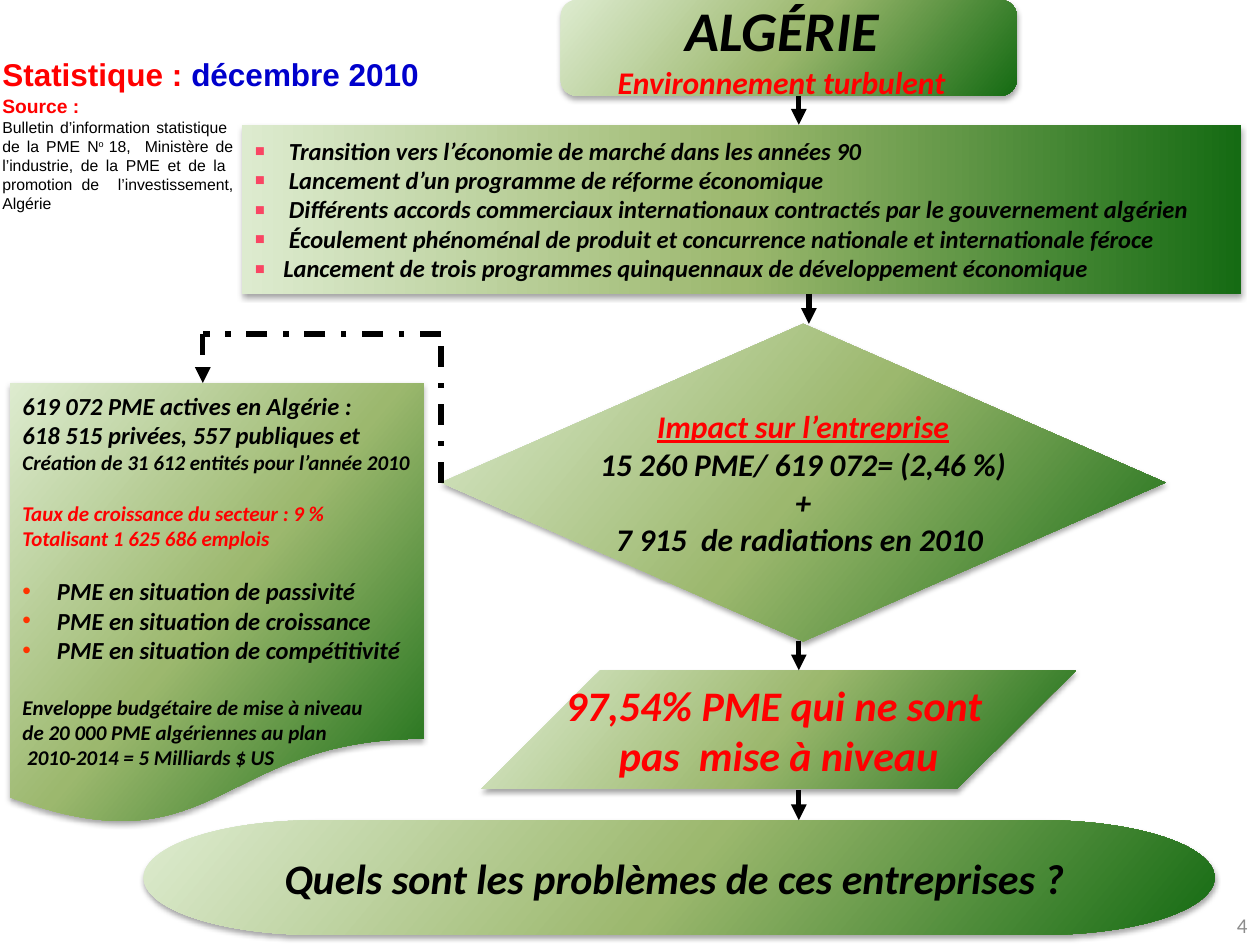
from lxml import etree
from pptx import Presentation, util as u
from pptx.dml.color import RGBColor
from pptx.enum import dml, shapes, text
from pptx.oxml import parse_xml
from pptx.oxml.ns import nsdecls, qn

PX = 9144
BLACK, RED, BLUE, GREY = "000000", "FF0000", "0000CC", "8C8C8C"
STOPS = ((0, "DDEBCF"), (50, "9CB86E"), (100, "156B13"))
KIND = shapes.MSO_SHAPE
LEFT, CENTER, RIGHT, JUSTIFY = (
    text.PP_ALIGN.LEFT, text.PP_ALIGN.CENTER, text.PP_ALIGN.RIGHT, text.PP_ALIGN.JUSTIFY)


def px(*values):
    """Turn px (100 to the inch) into EMU."""
    return [u.Emu(v * PX) for v in values]


def rgb(value):
    """Turn a hex string into a colour."""
    return RGBColor.from_string(value)


def add_run(p, content, size, color, font="Calibri", bold=True, italic=True, underline=False, raised=False):
    """Add one styled run to a paragraph."""
    r = p.add_run()
    r.text = content
    f = r.font
    f.size, f.name, f.bold, f.italic, f.underline = u.Pt(size), font, bold, italic, underline
    f.color.rgb = rgb(color)
    if raised:
        f._element.set("baseline", "30000")


def add_paragraph(tf, runs, align=LEFT, before=0, **style):
    """Fill the first empty paragraph, or a new one, with (text, size, colour) runs."""
    p = tf.paragraphs[0] if not tf.paragraphs[0].runs else tf.add_paragraph()
    p.alignment, p.space_before = align, u.Pt(before)
    for run in runs:
        add_run(p, *run, **style)
    return p


def add_bullet(p, char, color, percent, indent=23):
    """Give a paragraph a hanging coloured bullet."""
    pPr = p._p.get_or_add_pPr()
    pPr.set("marL", str(indent * PX))
    pPr.set("indent", str(-indent * PX))
    clr = etree.SubElement(pPr, qn("a:buClr"))
    etree.SubElement(clr, qn("a:srgbClr"), val=color)
    etree.SubElement(pPr, qn("a:buSzPct"), val=str(percent * 1000))
    etree.SubElement(pPr, qn("a:buFont"), typeface="Arial")
    etree.SubElement(pPr, qn("a:buChar"), char=char)


def add_panel(s, kind, box, angle=40, wrap=False):
    """Add a green gradient shape with a soft shadow."""
    sp = s.shapes.add_shape(kind, *px(*box))
    sp.line.fill.background()
    stops = "".join(f'<a:gs pos="{pos * 1000}"><a:srgbClr val="{c}"/></a:gs>' for pos, c in STOPS)
    grad = parse_xml(f'<a:gradFill {nsdecls("a")} rotWithShape="1"><a:gsLst>{stops}</a:gsLst>'
                     f'<a:lin ang="{angle * 60000}" scaled="0"/></a:gradFill>')
    shadow = parse_xml(f'<a:effectLst {nsdecls("a")}><a:outerShdw blurRad="40000" dist="23000" dir="5400000" '
                       'rotWithShape="0"><a:srgbClr val="000000"><a:alpha val="35000"/></a:srgbClr>'
                       '</a:outerShdw></a:effectLst>')
    spPr = sp._element.spPr
    spPr.find(qn("a:prstGeom")).addnext(grad)
    spPr.append(shadow)
    tf = sp.text_frame
    tf.word_wrap, tf.vertical_anchor = wrap, text.MSO_ANCHOR.MIDDLE
    return sp


def add_centered(s, kind, box, lines):
    """Add a panel holding centred one-run lines."""
    sp = add_panel(s, kind, box)
    for content, size, color, underline in lines:
        add_paragraph(sp.text_frame, [(content, size, color)], CENTER, underline=underline)
    return sp


def add_context(s, box):
    """Add the bulleted panel on the economic context."""
    tf = add_panel(s, KIND.FLOWCHART_PROCESS, box, angle=0, wrap=True).text_frame
    for content in (
            " Transition vers l’économie de marché dans les années 90",
            " Lancement d’un programme de réforme économique",
            " Différents accords commerciaux internationaux contractés par le gouvernement algérien",
            " Écoulement phénoménal de produit et concurrence nationale et internationale féroce",
            "Lancement de trois programmes quinquennaux de développement économique"):
        add_bullet(add_paragraph(tf, [(content, 14, BLACK)]), "▪", "F94563", 130)


def add_figures(s, box):
    """Add the document panel with the key figures on firms."""
    tf = add_panel(s, KIND.FLOWCHART_DOCUMENT, box, wrap=True).text_frame
    tf.vertical_anchor = text.MSO_ANCHOR.TOP
    tf.margin_top, tf.margin_right = px(6, 0)
    for content, size, color, before, bullet in (
            ("619 072 PME actives en Algérie :", 14, BLACK, 0, False),
            ("618 515 privées, 557 publiques et", 14, BLACK, 0, False),
            ("Création de 31 612 entités pour l’année 2010", 12, BLACK, 0, False),
            ("Taux de croissance du secteur : 9 %", 12, RED, 14.6, False),
            ("Totalisant 1 625 686 emplois", 12, RED, 0, False),
            (" PME en situation de passivité", 14, BLACK, 14.6, True),
            (" PME en situation de croissance", 14, BLACK, 0, True),
            (" PME en situation de compétitivité", 14, BLACK, 0, True),
            ("Enveloppe budgétaire de mise à niveau", 12, BLACK, 17, False),
            ("de 20 000 PME algériennes au plan", 12, BLACK, 0, False),
            (" 2010-2014 = 5 Milliards $ US", 12, BLACK, 0, False)):
        p = add_paragraph(tf, [(content, size, color)], before=before)
        if bullet:
            add_bullet(p, "•", "FF3300", 100)


def add_line(s, ends, dashed=False, arrow=True):
    """Add a thick black straight connector."""
    c = s.shapes.add_connector(shapes.MSO_CONNECTOR.STRAIGHT, *px(*ends))
    c.line.width = u.Pt(3)
    c.line.color.rgb = rgb(BLACK)
    if dashed:
        c.line.dash_style = dml.MSO_LINE.DASH_DOT
    if arrow:
        etree.SubElement(c.line._get_or_add_ln(), qn("a:tailEnd"), type="triangle")
    etree.SubElement(c._element.spPr, qn("a:effectLst"))
    return c


def add_text(s, box):
    """Add an empty wrapping text box and return its frame."""
    tf = s.shapes.add_textbox(*px(*box)).text_frame
    tf.word_wrap = True
    return tf


def add_source(s, left, top):
    """Add the statistics heading and its source note."""
    style = dict(font="Arial", italic=False)
    heading = add_text(s, (left, top, 366, 40))
    add_paragraph(heading, [("Statistique : ", 18, RED), ("décembre 2010", 18, BLUE)], **style)
    note = add_text(s, (left, top + 31, 203, 104))
    add_paragraph(note, [("Source :", 11, RED)], **style)
    p = add_paragraph(note, [("Bulletin d’information statistique  de la PME N", 9, BLACK)],
                      JUSTIFY, bold=False, **style)
    add_run(p, "o ", 9, BLACK, bold=False, raised=True, **style)
    add_run(p, "18,  Ministère de l’industrie, de la PME et de la  promotion de  "
               "l’investissement, Algérie", 9, BLACK, bold=False, **style)


def add_number(s, box):
    """Add the slide number."""
    tf = add_text(s, box)
    tf.vertical_anchor = text.MSO_ANCHOR.MIDDLE
    add_paragraph(tf, [("4", 12, GREY)], RIGHT, bold=False, italic=False)


def main():
    """Build the flow chart slide and save it."""
    prs = Presentation()
    prs.slide_width, prs.slide_height = px(1000, 750)
    s = prs.slides.add_slide(prs.slide_layouts[6])
    add_centered(s, KIND.FLOWCHART_ALTERNATE_PROCESS, (445, 0, 362, 76), [
        ("ALGÉRIE ", 32, BLACK, False), ("Environnement turbulent  ", 18, RED, False)])
    impact = add_centered(s, KIND.FLOWCHART_DECISION, (350, 257, 575, 252), [
        ("Impact sur l’entreprise", 18, RED, True),
        ("15 260 PME/ 619 072= (2,46 %)", 18, BLACK, False),
        ("+", 18, BLACK, False),
        ("7 915  de radiations en 2010 ", 18, BLACK, False)])
    add_centered(s, KIND.FLOWCHART_TERMINATOR, (114, 651, 850, 91), [
        ("Quels sont les problèmes de ces entreprises ? ", 24, BLACK, False)])
    add_centered(s, KIND.FLOWCHART_DATA, (382, 532, 472, 94), [
        ("97,54% PME qui ne sont ", 24, RED, False), ("pas  mise à niveau", 24, RED, False)])
    add_figures(s, (8, 304, 328, 352))
    add_context(s, (192, 99, 793, 134))
    for x, top, bottom in ((634, 76, 99), (634, 627, 651), (634, 509, 532), (642, 233, 257)):
        add_line(s, (x, top, x, bottom))
    add_line(s, (161, 265, 161, 304), dashed=True)
    add_line(s, (350, 383, 350, 265), dashed=True, arrow=False).begin_connect(impact, 1)
    add_line(s, (350, 265, 161, 265), dashed=True, arrow=False)
    add_source(s, -8, 39)
    add_number(s, (945, 719, 55, 31))
    prs.save("out.pptx")


if __name__ == "__main__":
    main()
